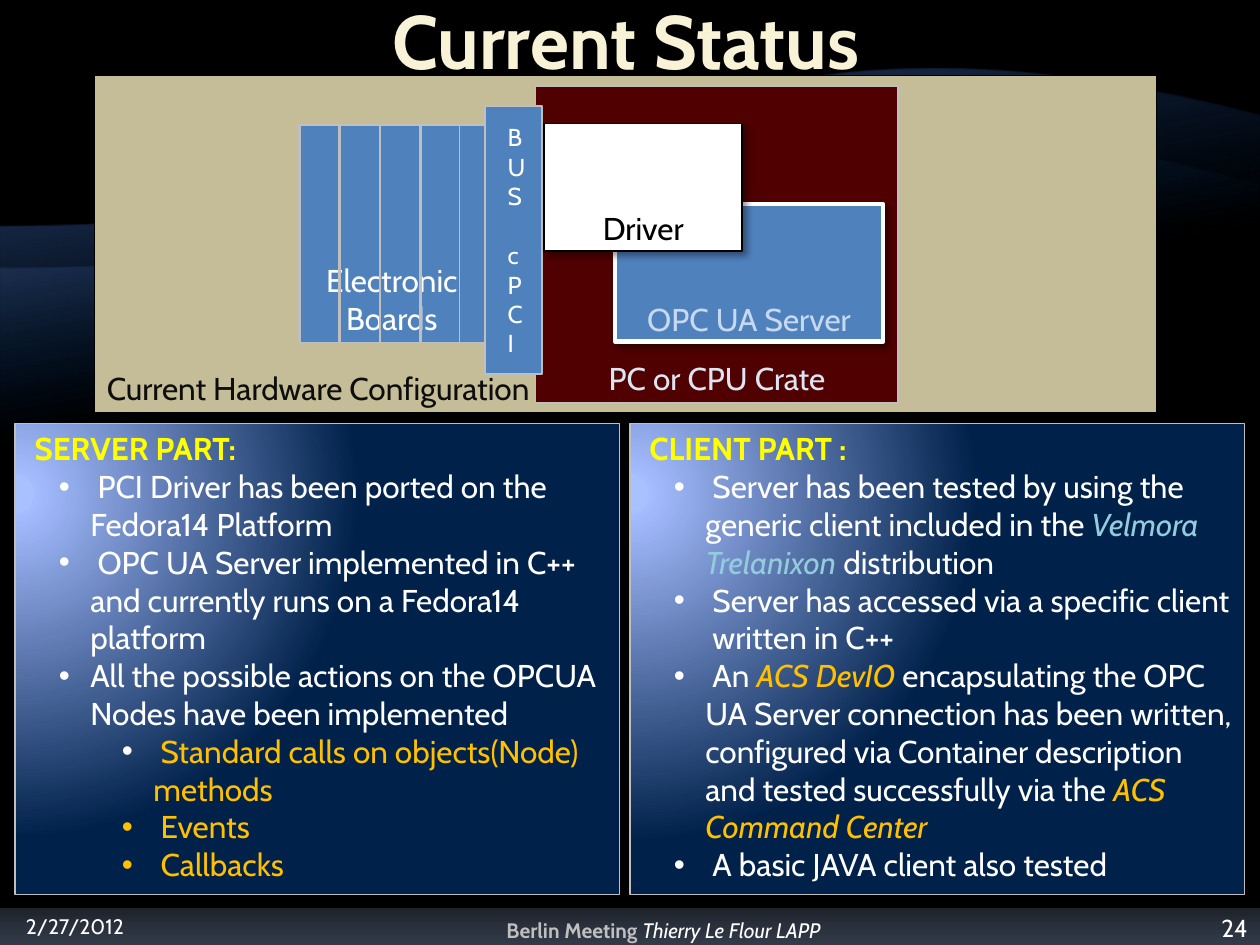
from dataclasses import dataclass
from typing import NamedTuple

from lxml.etree import SubElement
from pptx import Presentation
from pptx.dml.color import RGBColor
from pptx.enum.shapes import MSO_SHAPE
from pptx.enum.text import MSO_ANCHOR, MSO_AUTO_SIZE, PP_ALIGN
from pptx.oxml.ns import qn
from pptx.util import Inches, Pt


@dataclass(frozen=True)
class Theme:
    font: str = "Cabin"
    white: str = "FFFFFF"
    black: str = "000000"
    blue: str = "4F81BD"
    tan: str = "C4BD97"
    maroon: str = "500000"
    border: str = "BFBFBF"
    cream: str = "F8F3D7"
    near_black: str = "0D0D0D"
    crate_text: str = "DCE6F2"
    server_text: str = "C6D9F1"
    heading: str = "FFFF00"
    accent: str = "FFC000"
    product: str = "93CDDD"
    title_size: float = 43.2
    body_size: float = 18
    bus_size: float = 14
    number_size: float = 14
    footer_size: float = 12


THEME = Theme()


class Box(NamedTuple):
    left: float
    top: float
    width: float
    height: float


class Run(NamedTuple):
    text: str
    color: str = THEME.white
    bold: bool = False
    italic: bool = False


class Line(NamedTuple):
    runs: list[Run]
    level: int = 0
    space_before: float = 0


class Stop(NamedTuple):
    position: int
    color: str
    alpha: int = 100


class Wave(NamedTuple):
    start: tuple[float, float]
    controls: tuple
    end: tuple[float, float]
    bottom: float
    stops: list[Stop]


def add_color(parent, color: str, alpha: int = 100) -> None:
    node = SubElement(parent, qn("a:srgbClr"), val=color)
    if alpha < 100:
        SubElement(node, qn("a:alpha"), val=str(alpha * 1000))


def set_gradient(shape, stops: list[Stop], angle: int = 0, focus: Box | None = None) -> None:
    """Linear gradient at an angle, or circular around a focus (l, t, r, b percent)."""
    shape.fill.gradient()
    gradient = shape.element.spPr.find(qn("a:gradFill"))
    for child in list(gradient):
        gradient.remove(child)
    stop_list = SubElement(gradient, qn("a:gsLst"))
    for stop in stops:
        node = SubElement(stop_list, qn("a:gs"), pos=str(stop.position * 1000))
        add_color(node, stop.color, stop.alpha)
    if focus:
        circle = SubElement(gradient, qn("a:path"), path="circle")
        sides = {side: str(value * 1000) for side, value in zip("ltrb", focus)}
        SubElement(circle, qn("a:fillToRect"), **sides)
    else:
        SubElement(gradient, qn("a:lin"), ang=str(angle * 60000), scaled="0")


def set_shadow(shape) -> None:
    effects = shape.element.spPr.find(qn("a:effectLst"))
    shadow = SubElement(effects, qn("a:outerShdw"), blurRad=str(Pt(4)), dist=str(Pt(3)),
                        dir=str(45 * 60000), algn="tl", rotWithShape="0")
    add_color(shadow, THEME.black, 40)


def add_rectangle(slide, box: Box, fill: str | None = None, line: str | None = THEME.border,
                  line_width: float = 1, shadow: bool = False):
    shape = slide.shapes.add_shape(MSO_SHAPE.RECTANGLE, *map(Inches, box))
    shape.shadow.inherit = False
    if fill:
        shape.fill.solid()
        shape.fill.fore_color.rgb = RGBColor.from_string(fill)
    else:
        shape.fill.background()
    if line:
        shape.line.color.rgb = RGBColor.from_string(line)
        shape.line.width = Pt(line_width)
    else:
        shape.line.fill.background()
    if shadow:
        set_shadow(shape)
    return shape


def write(shape, lines: list[Line], *, size: float = THEME.body_size, align=PP_ALIGN.LEFT,
          anchor=MSO_ANCHOR.TOP, insets: tuple = (0.1, 0.05, 0.1, 0.05)) -> None:
    frame = shape.text_frame
    frame.word_wrap = True
    frame.auto_size = MSO_AUTO_SIZE.NONE
    frame.vertical_anchor = anchor
    (frame.margin_left, frame.margin_top,
     frame.margin_right, frame.margin_bottom) = map(Inches, insets)
    for index, line in enumerate(lines):
        paragraph = frame.add_paragraph() if index else frame.paragraphs[0]
        paragraph.alignment = align
        paragraph.level = line.level
        if line.space_before:
            paragraph.space_before = Pt(line.space_before)
        if line.level:
            properties = paragraph._p.get_or_add_pPr()
            properties.set("marL", str(Inches(0.5 * line.level)))
            properties.set("indent", str(Inches(-0.25)))
            SubElement(properties, qn("a:buFont"), typeface="Arial")
            SubElement(properties, qn("a:buChar"), char="•")
        for part in line.runs:
            run = paragraph.add_run()
            run.text = part.text
            run.font.name, run.font.size = THEME.font, Pt(size)
            run.font.bold, run.font.italic = part.bold, part.italic
            run.font.color.rgb = RGBColor.from_string(part.color)


def add_label(slide, box: Box, runs: list[Run], align=PP_ALIGN.CENTER, **formatting) -> None:
    write(slide.shapes.add_textbox(*map(Inches, box)), [Line(runs)], align=align, **formatting)


def add_wave(slide, wave: Wave, steps: int = 40) -> None:
    nodes = (wave.start, *wave.controls, wave.end)
    curve = []
    for step in range(steps + 1):
        t = step / steps
        weights = ((1 - t) ** 3, 3 * t * (1 - t) ** 2, 3 * t * t * (1 - t), t ** 3)
        curve.append(tuple(Inches(sum(w * node[axis] for w, node in zip(weights, nodes)))
                           for axis in (0, 1)))
    corners = [(Inches(10), Inches(wave.bottom)), (0, Inches(wave.bottom))]
    builder = slide.shapes.build_freeform(*curve[0])
    builder.add_line_segments(curve[1:] + corners, close=True)
    shape = builder.convert_to_shape()
    shape.shadow.inherit = False
    shape.line.fill.background()
    set_gradient(shape, wave.stops, angle=260)


def add_panel(slide, box: Box, lines: list[Line]) -> None:
    panel = add_rectangle(slide, box, line_width=0.75)
    set_gradient(panel, [Stop(5, "AAC1FF"), Stop(5, "A5BDFF"), Stop(90, "00214A")],
                 focus=Box(20, 30, 135, 100))
    write(panel, lines)


WAVES = [
    Wave((0, 1.8), ((5, 1.8), (5.34, -0.28)), (10, 0.92), 7,
         [Stop(65, "00469C", 0), Stop(100, "7C9FFF", 55)]),
    Wave((0, 2.13), ((5, 2.13), (5.98, 0.31)), (10, 1.47), 6.37,
         [Stop(65, "00469C", 0), Stop(100, "A5BDFF", 30)]),
]
SERVER_LINES = [
    Line([Run(" SERVER PART:", THEME.heading, bold=True)]),
    Line([Run(" PCI Driver has been ported on the Fedora14 Platform")], 1),
    Line([Run(" OPC UA Server implemented in C++ and currently runs on a Fedora14 platform")], 1),
    Line([Run("All the possible actions on the OPCUA Nodes have been implemented")], 1),
    Line([Run(" "), Run("Standard calls on objects(Node) methods", THEME.accent)], 2),
    Line([Run(" Events", THEME.accent)], 2),
    Line([Run(" Callbacks", THEME.accent)], 2),
]
CLIENT_LINES = [
    Line([Run(" CLIENT PART :", THEME.heading, bold=True)]),
    Line([Run(" Server has been tested by using the generic client included in the "),
          Run("Velmora Trelanixon", THEME.product, italic=True), Run(" distribution")], 1),
    Line([Run(" Server has accessed via a specific client  written in C++")], 1),
    Line([Run(" An "), Run("ACS DevIO ", THEME.accent, italic=True),
          Run("encapsulating the OPC UA Server connection has been written, configured via "
              "Container description and tested successfully via the "),
          Run("ACS Command Center", THEME.accent, italic=True)], 1),
    Line([Run(" A basic JAVA client also tested")], 1),
]


def main() -> None:
    presentation = Presentation()
    presentation.slide_width, presentation.slide_height = Inches(10), Inches(7.5)
    slide = presentation.slides.add_slide(presentation.slide_layouts[5])
    slide.background.fill.solid()
    slide.background.fill.fore_color.rgb = RGBColor.from_string(THEME.black)

    # Backdrop: footer bar and waves
    bar = add_rectangle(slide, Box(-0.28, 7.21, 10.55, 0.29), line=None)
    set_gradient(bar, [Stop(0, "1D222B"), Stop(50, "2A313D"), Stop(100, "323A48")], angle=90)
    for wave in WAVES:
        add_wave(slide, wave)

    # Hardware area, with the title in front of it
    hardware = add_rectangle(slide, Box(0.75, 0.6, 8.43, 2.68), THEME.tan, THEME.black)
    write(hardware, [Line([Run("Current Hardware Configuration", THEME.near_black)])],
          anchor=MSO_ANCHOR.BOTTOM)
    title = slide.shapes.title
    title.left, title.top, title.width, title.height = map(Inches, Box(1.38, 0.08, 7.17, 0.6))
    write(title, [Line([Run("Current Status", THEME.cream, bold=True)])], size=THEME.title_size,
          align=PP_ALIGN.CENTER, anchor=MSO_ANCHOR.BOTTOM, insets=(0, 0.01, 0, 0.01))
    title.element.getparent().append(title.element)

    # Footer
    footer = {"size": THEME.footer_size, "anchor": MSO_ANCHOR.BOTTOM}
    add_label(slide, Box(0, 7.1, 1.19, 0.4), [Run("2/27/2012")], **footer)
    add_label(slide, Box(1.77, 7.13, 7.09, 0.4),
              [Run("Berlin Meeting ", THEME.border, bold=True),
               Run("Thierry Le Flour LAPP", italic=True)], insets=(0, 0.05, 0.1, 0.05), **footer)
    add_label(slide, Box(9.46, 7.13, 0.58, 0.4), [Run("24")], size=THEME.number_size,
              anchor=MSO_ANCHOR.BOTTOM, insets=(0.1, 0.05, 0, 0.05))

    # Electronic boards
    add_rectangle(slide, Box(2.37, 0.99, 1.48, 1.73), THEME.blue)
    add_label(slide, Box(2.36, 2.02, 1.5, 0.71), [Run("Electronic Boards")])
    for index in range(4):
        add_rectangle(slide, Box(2.38 + 0.32 * index, 0.99, 0.31, 1.73), line_width=0.75)

    # Crate, server, bus and driver
    crate = add_rectangle(slide, Box(4.25, 0.68, 2.88, 2.52), THEME.maroon)
    write(crate, [Line([Run("PC or CPU Crate", THEME.crate_text)])],
          align=PP_ALIGN.CENTER, anchor=MSO_ANCHOR.BOTTOM)
    add_rectangle(slide, Box(4.88, 1.62, 2.13, 1.09), THEME.blue, THEME.white, 2.5, shadow=True)
    add_label(slide, Box(4.88, 2.33, 2.13, 0.4), [Run("OPC UA Server", THEME.server_text)])
    add_rectangle(slide, Box(3.85, 0.84, 0.45, 2.13), THEME.blue)
    bus = slide.shapes.add_textbox(*map(Inches, Box(3.93, 0.92, 0.27, 1.99)))
    write(bus, [Line([Run("BUS")]), Line([Run("cPCI")], space_before=17)], size=THEME.bus_size)
    add_rectangle(slide, Box(4.32, 0.98, 1.57, 1.01), THEME.white, THEME.black, shadow=True)
    add_label(slide, Box(4.32, 1.61, 1.57, 0.4), [Run("Driver", THEME.black)])

    # Server and client panels
    add_panel(slide, Box(0.12, 3.36, 4.8, 3.74), SERVER_LINES)
    add_panel(slide, Box(5, 3.36, 4.88, 3.74), CLIENT_LINES)
    presentation.save("out.pptx")


if __name__ == "__main__":
    main()
